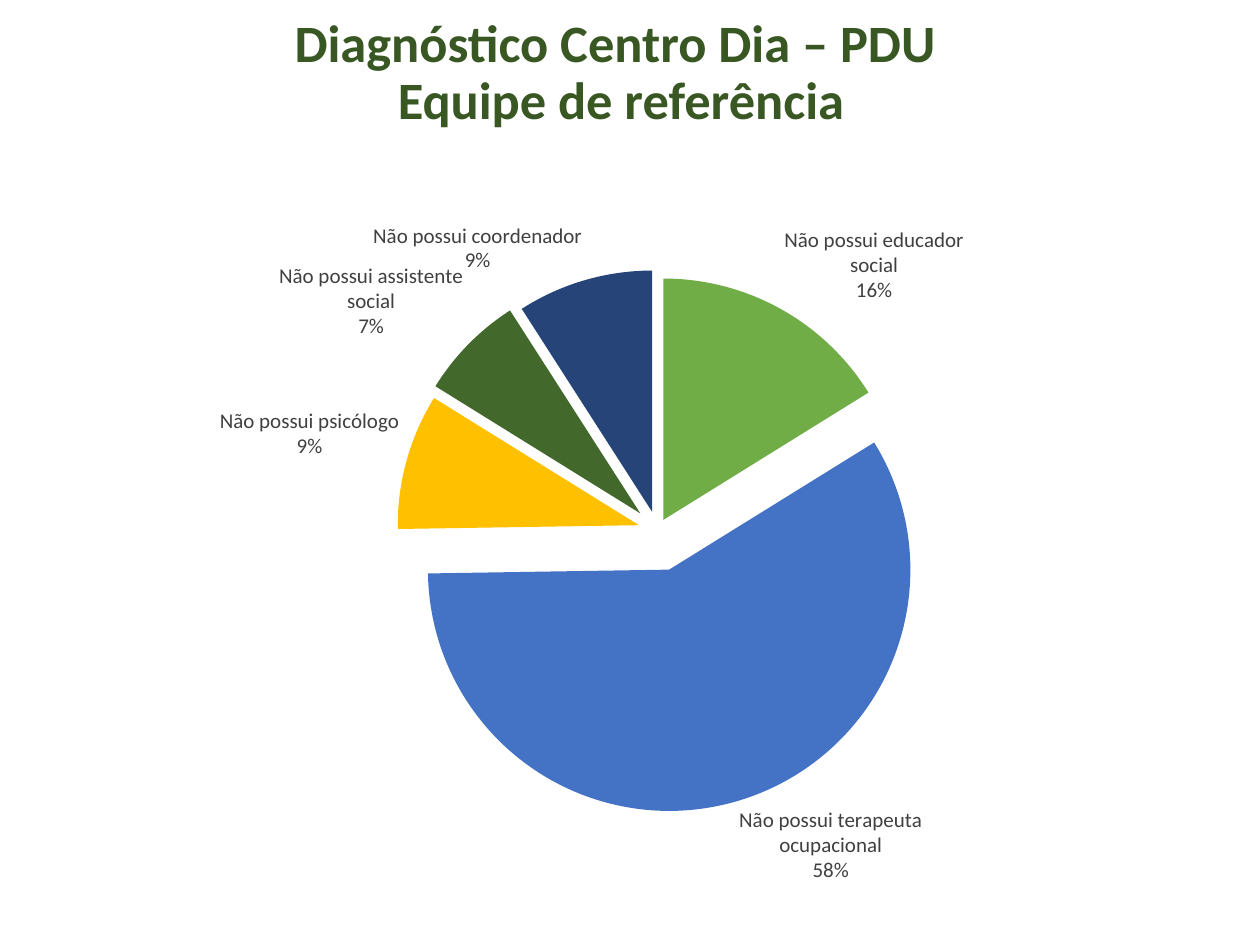
from lxml import etree
from pptx import Presentation
from pptx.chart.data import CategoryChartData
from pptx.dml.color import RGBColor
from pptx.enum.chart import XL_CHART_TYPE, XL_LABEL_POSITION
from pptx.enum.text import MSO_ANCHOR, PP_ALIGN
from pptx.oxml import parse_xml
from pptx.oxml.ns import nsdecls
from pptx.util import Inches, Pt

FOREST = RGBColor(0x38, 0x57, 0x23)
GRAY = RGBColor(0x40, 0x40, 0x40)
GREEN = RGBColor(0x70, 0xAD, 0x47)
BLUE = RGBColor(0x44, 0x72, 0xC4)
GOLD = RGBColor(0xFF, 0xC0, 0x00)
MOSS = RGBColor(0x43, 0x68, 0x2B)
NAVY = RGBColor(0x26, 0x44, 0x78)

LABEL = {"name": "Calibri", "size": Pt(12), "bold": False}
HEAD = {"name": "Calibri", "size": Pt(30), "bold": True}
CENTER = (4.74, 2.74)
WIDTH = 3.83
SLICES = [
    ("Não possui educador social", 16, GREEN, 5),
    ("Não possui terapeuta ocupacional", 58, BLUE, 17),
    ("Não possui psicólogo", 9, GOLD, 8),
    ("Não possui assistente social", 7, MOSS, 10),
    ("Não possui coordenador", 9, NAVY, 8),
]


def style(font, values, color):
    for name, value in values.items():
        setattr(font, name, value)
    font.color.rgb = color


def add_title(slide, box):
    title = slide.shapes.title
    for name, value in zip(("left", "top", "width", "height"), box):
        setattr(title, name, Inches(value))
    frame = title.text_frame
    frame.word_wrap = True
    frame.vertical_anchor = MSO_ANCHOR.MIDDLE
    frame.text = "Diagnóstico Centro Dia – PDU \nEquipe de referência"
    for para in frame.paragraphs:
        para.alignment = PP_ALIGN.CENTER
        para.line_spacing = 0.9
        para.space_before = Pt(0)
        style(para.runs[0].font, HEAD, FOREST)


def set_plot(chart, width, height):
    area = chart.plots[0]._element.getparent()
    for old in area.findall("{*}layout"):
        area.remove(old)
    layout = parse_xml(f"<c:layout {nsdecls('c')}><c:manualLayout/></c:layout>")
    rules = {
        "layoutTarget": "inner", "xMode": "edge", "yMode": "edge",
        "x": (CENTER[0] - WIDTH / 2) / width,
        "y": (CENTER[1] - WIDTH / 2) / height,
        "w": WIDTH / width, "h": WIDTH / height,
    }
    for name, value in rules.items():
        tag = "{%s}%s" % (layout.nsmap["c"], name)
        etree.SubElement(layout[0], tag).set("val", str(value))
    area.insert(0, layout)


def add_label(point, text):
    label = point.data_label
    label.position = XL_LABEL_POSITION.OUTSIDE_END
    label.text_frame.text = text
    for para in label.text_frame.paragraphs:
        style(para.runs[0].font, LABEL, GRAY)


def add_pie(slide, box):
    data = CategoryChartData()
    data.categories = [item[0] for item in SLICES]
    data.add_series("Series 1", [item[1] for item in SLICES])
    chart = slide.shapes.add_chart(
        XL_CHART_TYPE.PIE, *map(Inches, box), data).chart
    chart.has_title = False
    chart.has_legend = False
    style(chart.font, LABEL, GRAY)
    set_plot(chart, *box[2:])
    plot = chart.plots[0]
    plot.vary_by_categories = True
    points = plot.series[0].points
    for index, (name, share, color, burst) in enumerate(SLICES):
        fill = points[index].format.fill
        fill.solid()
        fill.fore_color.rgb = color
        node = points[index].format._element
        tag = f"<c:explosion {nsdecls('c')} val='{burst}'/>"
        node.find("{*}spPr").addprevious(parse_xml(tag))
    labels = plot.series[0].data_labels
    rules = {
        "show_category_name": True, "show_percentage": True,
        "show_value": False, "number_format": "0%",
        "number_format_is_linked": False,
        "position": XL_LABEL_POSITION.OUTSIDE_END,
    }
    for name, value in rules.items():
        setattr(labels, name, value)
    style(labels.font, LABEL, GRAY)
    mark = f"<c:separator {nsdecls('c')}>\n</c:separator>"
    labels._element.find("{*}showBubbleSize").addnext(parse_xml(mark))
    add_label(points[1], f"{SLICES[1][0]}\n{SLICES[1][1]}%")


def main():
    deck = Presentation()
    deck.slide_width, deck.slide_height = Inches(10), Inches(7.5)
    slide = deck.slides.add_slide(deck.slide_layouts[5])
    add_pie(slide, (0.48, 1.47, 8.9, 5.73))
    add_title(slide, (0.2, 0.21, 9.46, 0.76))
    deck.save("out.pptx")


if __name__ == "__main__":
    main()
